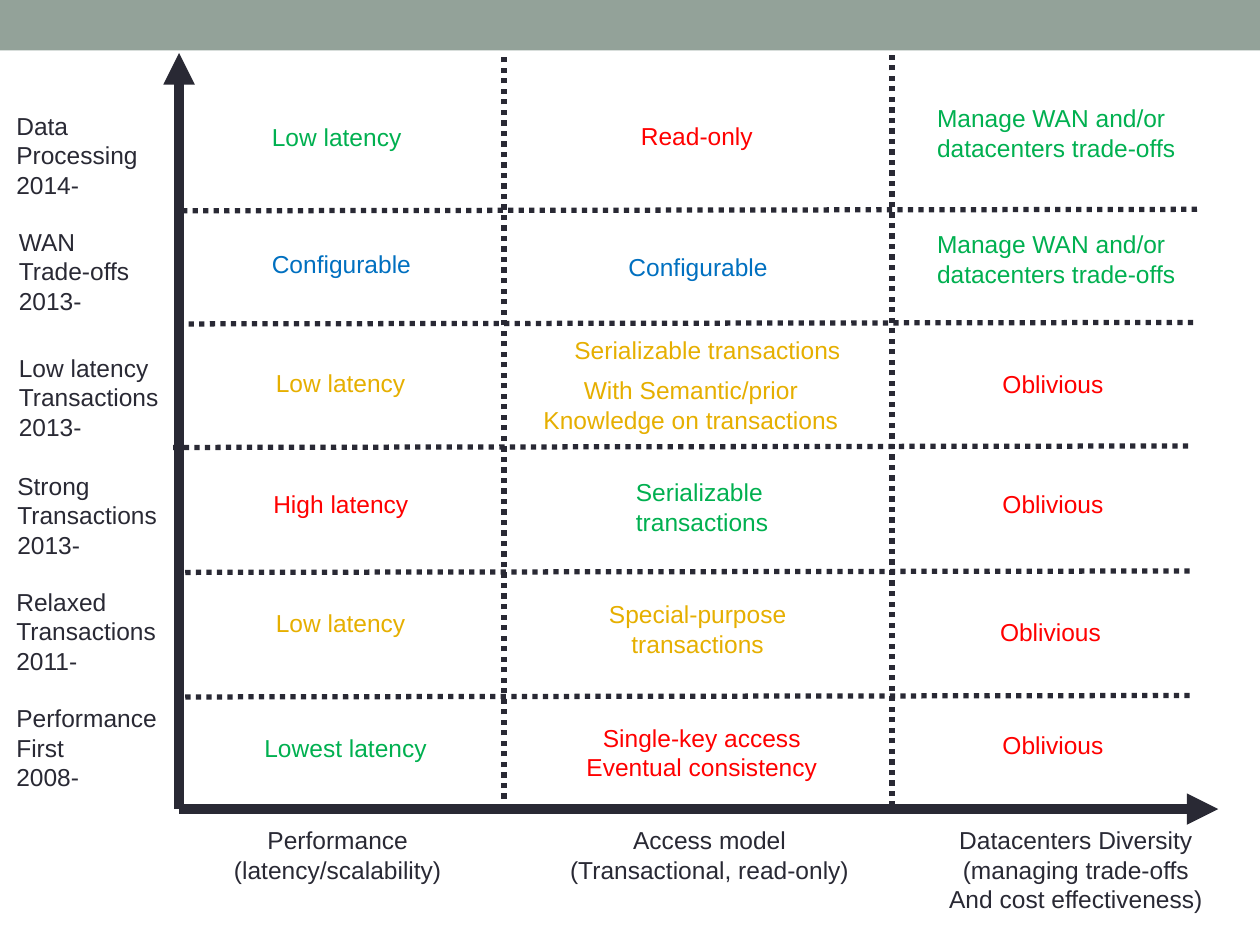
"""Build a slide that charts six kinds of data systems against three trade-offs."""
from typing import NamedTuple

from lxml.etree import SubElement
from pptx import Presentation
from pptx.dml.color import RGBColor
from pptx.enum.dml import MSO_LINE_DASH_STYLE as Dash
from pptx.enum.shapes import MSO_CONNECTOR_TYPE as Connector, MSO_SHAPE as Shape
from pptx.enum.text import MSO_AUTO_SIZE as AutoSize, PP_ALIGN as Align
from pptx.oxml.ns import qn
from pptx.slide import Slide
from pptx.util import Cm, Pt

COLORS = {
    "banner": "93A299",
    "ink": "292934",
    "good": "00B050",
    "fair": "E6AF00",
    "poor": "FF0000",
    "flexible": "0070C0",
}
FONT = "Arial"
FONT_SIZE = 14
LINE_HEIGHT = 0.6
BOX_PADDING = 0.26
ORIGIN_X, ORIGIN_Y = 3.61, 16.31
DIVIDER_LENGTH = 20.53
DIVIDER_DROP = 0.03


class Label(NamedTuple):
    text: str
    left: float
    top: float
    width: float
    color: str = "ink"
    align: Align = Align.LEFT
    wrap: bool = False


class Line(NamedTuple):
    start_x: float
    start_y: float
    end_x: float
    end_y: float


class Divider(NamedTuple):
    right: float
    top: float


AXES = [
    Line(ORIGIN_X, ORIGIN_Y, 24.56, ORIGIN_Y),
    Line(ORIGIN_X, ORIGIN_Y, ORIGIN_X, 1.07),
]
COLUMN_DIVIDERS = [Line(10.16, 16.31, 10.16, 1.12), Line(17.98, 16.26, 17.98, 1.09)]
ROW_DIVIDERS = [
    Divider(23.98, 14.02),
    Divider(23.98, 11.51),
    Divider(23.95, 8.99),
    Divider(24.05, 6.5),
    Divider(24.13, 4.22),
]
ROW_LABELS = [
    Label("Performance\nFirst\n2008-", 0.08, 14.05, 3.35),
    Label("Relaxed\nTransactions\n2011-", 0.08, 11.71, 3.33),
    Label("Strong\nTransactions\n2013-", 0.1, 9.37, 3.33),
    Label("Low latency\nTransactions\n2013-", 0.13, 6.99, 3.33),
    Label("WAN\nTrade-offs\n2013-", 0.13, 4.45, 2.74),
    Label("Data\nProcessing\n2014-", 0.08, 2.11, 2.97),
]
COLUMN_LABELS = [
    Label("Performance\n(latency/scalability)", 4.45, 16.51, 4.72, align=Align.CENTER),
    Label("Access model\n(Transactional, read-only)", 11.23, 16.51, 6.15, align=Align.CENTER),
    Label("Datacenters Diversity\n(managing trade-offs\nAnd cost effectiveness)",
          18.87, 16.51, 5.64, align=Align.CENTER),
]
PERFORMANCE_CELLS = [
    Label("Lowest latency", 5.08, 14.66, 3.81, "good"),
    Label("Low latency", 5.31, 12.14, 3.15, "fair"),
    Label("High latency", 5.26, 9.73, 3.25, "poor"),
    Label("Low latency", 5.31, 7.29, 3.15, "fair"),
    Label("Configurable", 5.23, 4.9, 3.33, "flexible"),
    Label("Low latency", 5.23, 2.34, 3.15, "good"),
]
ACCESS_CELLS = [
    Label("Single-key access\nEventual consistency", 11.56, 14.45, 5.18, "poor", Align.CENTER),
    Label("Special-purpose\ntransactions", 12.01, 11.96, 4.11, "fair", Align.CENTER),
    Label("Serializable\ntransactions", 12.57, 9.5, 3.2, "good"),
    Label("With Semantic/prior\nKnowledge on transactions", 10.69, 7.44, 6.48, "fair", Align.CENTER),
    Label("Serializable transactions", 11.33, 6.63, 6.05, "fair", wrap=True),
    Label("Configurable", 12.42, 4.95, 3.33, "flexible"),
    Label("Read-only", 12.67, 2.31, 2.77, "poor"),
]
DIVERSITY_CELLS = [
    Label("Oblivious", 19.96, 14.6, 2.57, "poor"),
    Label("Oblivious", 19.91, 12.32, 2.57, "poor"),
    Label("Oblivious", 19.96, 9.73, 2.57, "poor"),
    Label("Oblivious", 19.96, 7.32, 2.57, "poor"),
    Label("Manage WAN and/or\ndatacenters trade-offs", 18.64, 4.5, 5.33, "good"),
    Label("Manage WAN and/or\ndatacenters trade-offs", 18.64, 1.96, 5.33, "good"),
]


def color(name: str) -> RGBColor:
    """Return the named colour."""
    return RGBColor.from_string(COLORS[name])


def draw_banner(slide: Slide) -> None:
    """Draw the band across the top."""
    banner = slide.shapes.add_shape(Shape.RECTANGLE, Cm(0), Cm(0), Cm(25.4), Cm(1.02))
    banner.shadow.inherit = False
    banner.fill.solid()
    banner.fill.fore_color.rgb = color("banner")
    banner.line.fill.background()


def draw_line(slide: Slide, line: Line, width: float, is_axis: bool) -> None:
    """Draw an axis with an arrowhead, or a dotted divider."""
    connector = slide.shapes.add_connector(
        Connector.STRAIGHT, Cm(line.start_x), Cm(line.start_y), Cm(line.end_x), Cm(line.end_y)
    )
    connector.line.color.rgb = color("ink")
    connector.line.width = Pt(width)
    if is_axis:
        SubElement(connector.line._get_or_add_ln(), qn("a:tailEnd"), type="triangle")
    else:
        connector.line.dash_style = Dash.ROUND_DOT
    SubElement(connector._element.spPr, qn("a:effectLst"))


def draw_label(slide: Slide, label: Label) -> None:
    """Draw a text box as high as its number of lines."""
    height = BOX_PADDING + LINE_HEIGHT * len(label.text.splitlines())
    box = slide.shapes.add_textbox(Cm(label.left), Cm(label.top), Cm(label.width), Cm(height))
    text_frame = box.text_frame
    text_frame.text = label.text
    text_frame.word_wrap = label.wrap
    text_frame.auto_size = AutoSize.SHAPE_TO_FIT_TEXT
    for paragraph in text_frame.paragraphs:
        paragraph.alignment = label.align
        for run in paragraph.runs:
            run.font.name = FONT
            run.font.size = Pt(FONT_SIZE)
            run.font.color.rgb = color(label.color)


def main() -> None:
    """Draw the slide and save it."""
    presentation = Presentation()
    presentation.slide_width = Cm(25.4)
    presentation.slide_height = Cm(19.05)
    slide = presentation.slides.add_slide(presentation.slide_layouts[6])

    draw_banner(slide)
    for axis in AXES:
        draw_line(slide, axis, 6, is_axis=True)
    row_lines = [
        Line(row.right, row.top, row.right - DIVIDER_LENGTH, row.top + DIVIDER_DROP)
        for row in ROW_DIVIDERS
    ]
    for divider in COLUMN_DIVIDERS + row_lines:
        draw_line(slide, divider, 3, is_axis=False)
    for label in ROW_LABELS + COLUMN_LABELS + PERFORMANCE_CELLS + ACCESS_CELLS + DIVERSITY_CELLS:
        draw_label(slide, label)

    presentation.save("out.pptx")


if __name__ == "__main__":
    main()
